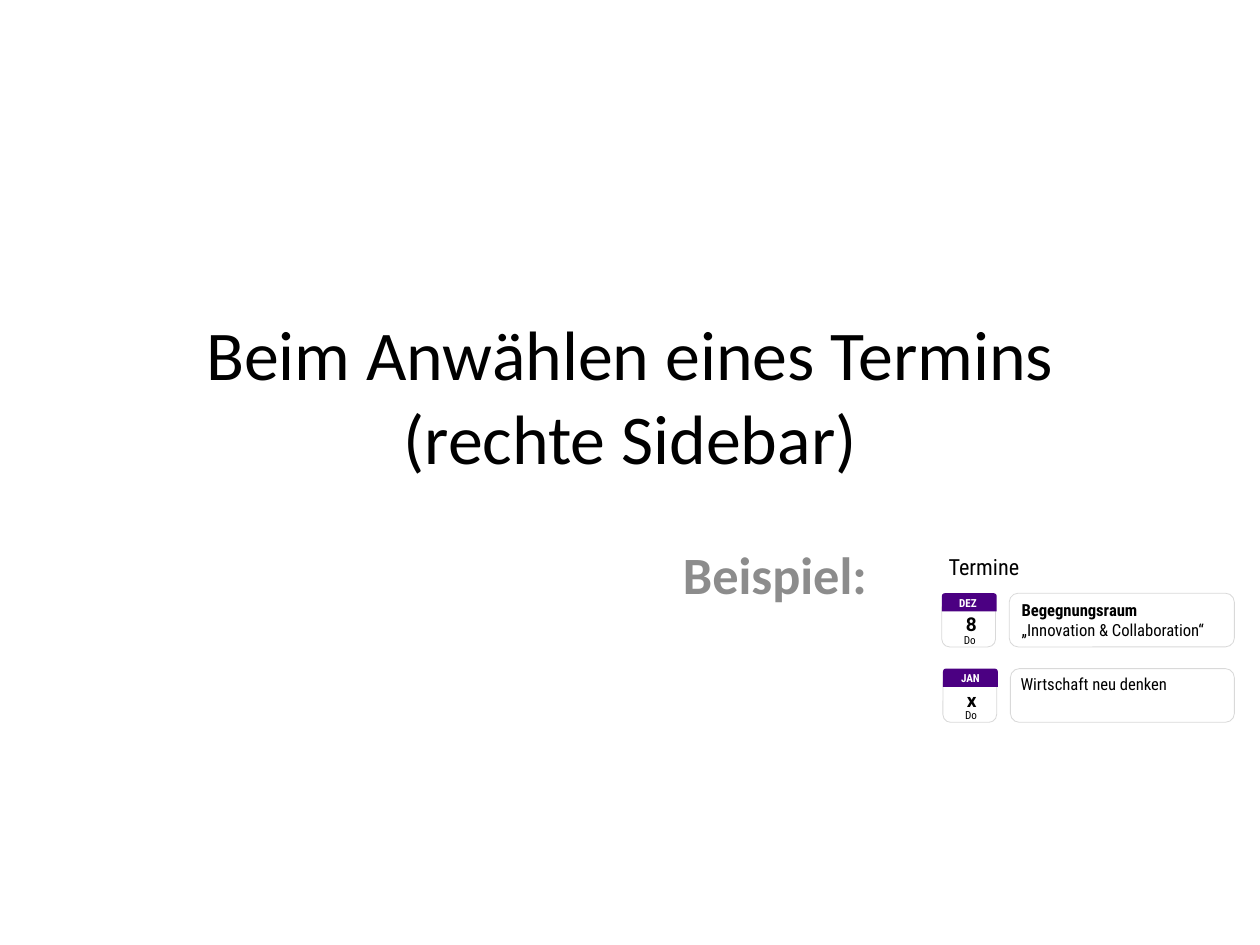
from dataclasses import dataclass

from pptx import Presentation
from pptx.dml.color import RGBColor
from pptx.enum.shapes import MSO_SHAPE
from pptx.enum.text import MSO_ANCHOR, MSO_AUTO_SIZE, PP_ALIGN
from pptx.util import Inches, Pt

ROUND = MSO_SHAPE.ROUNDED_RECTANGLE
TAB = MSO_SHAPE.ROUND_2_SAME_RECTANGLE
LEFT, CENTER, RIGHT = PP_ALIGN.LEFT, PP_ALIGN.CENTER, PP_ALIGN.RIGHT
TOP, MIDDLE = MSO_ANCHOR.TOP, MSO_ANCHOR.MIDDLE
FIXED = MSO_AUTO_SIZE.NONE
CM = 1 / 2.54


@dataclass(frozen=True)
class Theme:
    ink: str = "000000"
    paper: str = "FFFFFF"
    gray: str = "8C8C8C"
    edge: str = "D9D9D9"
    accent: str = "4B0082"
    main: str = "Calibri"
    slim: str = "Roboto Condensed"
    wide: str = "Roboto"
    title: float = 44
    lead: float = 33
    head: float = 14
    day: float = 12
    body: float = 10.5
    small: float = 7


THEME = Theme()


def write(frame, *lines, font=THEME.slim, size=THEME.body, color=THEME.ink,
          bold=(False,), align=LEFT, anchor=TOP, inset=(0.1, 0.05)):
    frame.auto_size = FIXED
    frame.word_wrap = True
    frame.vertical_anchor = anchor
    frame.margin_left = frame.margin_right = Inches(inset[0])
    frame.margin_top = frame.margin_bottom = Inches(inset[1])
    para = frame.paragraphs[0]
    para.alignment = align
    for index, (line, heavy) in enumerate(zip(lines, bold)):
        if index:
            para.add_line_break()
        run = para.add_run()
        run.text = line
        run.font.name = font
        run.font.size = Pt(size)
        run.font.bold = heavy
        run.font.color.rgb = RGBColor.from_string(color)


class Deck:
    def __init__(self, theme):
        self.theme = theme
        self.file = Presentation()
        self.file.slide_width = Inches(28 * CM)
        self.file.slide_height = Inches(21 * CM)
        self.slide = self.file.slides.add_slide(self.file.slide_layouts[0])

    def holder(self, index, box, text, **style):
        shape = self.slide.placeholders[index]
        shape.left, shape.top, shape.width, shape.height = map(Inches, box)
        write(shape.text_frame, text, font=self.theme.main, **style)

    def label(self, box, *lines, parent=None, **style):
        shapes = (parent or self.slide).shapes
        write(shapes.add_textbox(*map(Inches, box)).text_frame, *lines, **style)

    def panel(self, box, kind=ROUND, fill=None, edge=None, parent=None):
        shapes = (parent or self.slide).shapes
        shape = shapes.add_shape(kind, *map(Inches, box))
        shape.shadow.inherit = False
        shape.fill.solid()
        shape.fill.fore_color.rgb = RGBColor.from_string(fill or self.theme.paper)
        if edge:
            shape.line.color.rgb = RGBColor.from_string(edge)
            shape.line.width = Pt(0.5)
        else:
            shape.line.fill.background()
        return shape

    def date(self, left, top, month, day, week):
        look = self.theme
        group = self.slide.shapes.add_group_shape()
        small = dict(size=look.small, align=CENTER, anchor=MIDDLE)
        tight = dict(inset=(0.08, 0.08), parent=group)
        self.panel((left, top + 0.06, 0.47, 0.41), edge=look.edge, parent=group)
        self.label((left + 0.13, top + 0.19, 0.21, 0.16), day, font=look.wide,
                   size=look.day, bold=(True,), align=CENTER, anchor=MIDDLE, **tight)
        tab = self.panel((left, top, 0.48, 0.16), TAB, look.accent, parent=group)
        write(tab.text_frame, month, color=look.paper, bold=(True,), **small)
        self.label((left + 0.08, top + 0.33, 0.33, 0.16), week, **small, **tight)


def main():
    deck = Deck(THEME)
    deck.holder(0, (0.83, 2.57, 9.37, 1.77),
                "Beim Anwählen eines Termins (rechte Sidebar)",
                size=THEME.title, align=CENTER, anchor=MIDDLE)
    deck.holder(1, (2.44, 4.69, 5.35, 2.11), "Beispiel: ", size=THEME.lead,
                color=THEME.gray, bold=(True,), align=RIGHT)
    deck.label((8.2, 4.79, 1.89, 0.34), "Termine", size=THEME.head)

    deck.panel((8.83, 5.19, 1.97, 0.47), edge=THEME.edge)
    deck.panel((8.84, 5.85, 1.96, 0.47), edge=THEME.edge)
    deck.date(8.24, 5.19, "DEZ ", "8", "Do")
    deck.date(8.25, 5.85, "JAN", "x", "Do")
    deck.label((8.83, 5.85, 1.85, 0.28), "Wirtschaft neu denken")
    deck.label((8.84, 5.2, 2.09, 0.45), "Begegnungsraum",
               "„Innovation & Collaboration“", bold=(True, False))
    deck.file.save("out.pptx")


if __name__ == "__main__":
    main()
